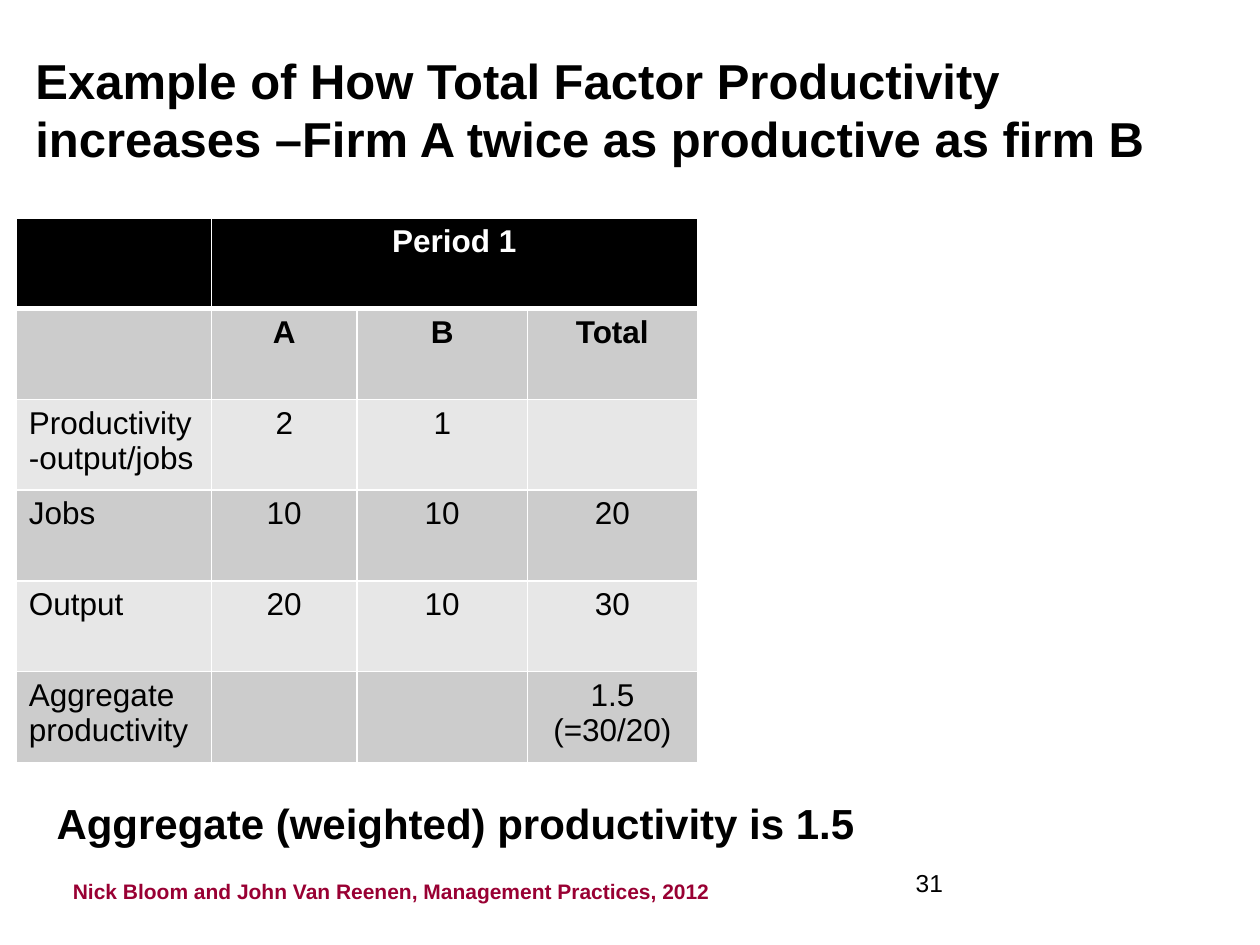
from lxml.etree import SubElement
from pptx import Presentation
from pptx.dml.color import RGBColor
from pptx.enum.text import MSO_ANCHOR, MSO_AUTO_SIZE, PP_ALIGN
from pptx.oxml.ns import qn
from pptx.util import Cm, Pt

COLOURS = {
    "text": "000000",
    "header": "000000",
    "header_text": "FFFFFF",
    "border": "FFFFFF",
    "dark_band": "CCCCCC",
    "light_band": "E7E7E7",
    "source": "990033",
}
FONT = "Arial"
TITLE = ("Example of How Total Factor Productivity increases "
         "–Firm A twice as productive as firm B")
ROWS = [
    ["", "Period 1", "", ""],
    ["", "A", "B", "Total"],
    ["Productivity\n-output/jobs", "2", "1", ""],
    ["Jobs", "10", "10", "20"],
    ["Output", "20", "10", "30"],
    ["Aggregate productivity", "", "", "1.5 (=30/20)"],
]
COLUMN_WIDTHS = [3.93, 2.94, 3.43, 3.43]
ROW_HEIGHT = 1.83
TABLE_LEFT, TABLE_TOP = 0.33, 4.39
NOTES = [
    ("Nick Bloom and John Van Reenen, Management Practices, 2012",
     (1.22, 17.58, 13.46, 0.76), 12, "source", True, False),
    ("31", (18.21, 17.37, 5.28, 1.27), 14, "text", False, True),
    ("Aggregate (weighted) productivity is 1.5",
     (0.89, 15.95, 16.74, 1.27), 24, "text", True, False),
]


def add_run(paragraph, text, size, colour, bold):
    run = paragraph.add_run()
    run.text = text
    run.font.name = FONT
    run.font.size = Pt(size)
    run.font.bold = bold
    run.font.color.rgb = RGBColor.from_string(COLOURS[colour])


def add_borders(cell, row):
    properties = cell._tc.get_or_add_tcPr()
    widths = {
        "a:lnL": 1,
        "a:lnR": 1,
        "a:lnT": 3 if row == 1 else 1,
        "a:lnB": 3 if row == 0 else 1,
    }
    for side, width in widths.items():
        line = SubElement(properties, qn(side), w=str(Pt(width)))
        fill = SubElement(line, qn("a:solidFill"))
        SubElement(fill, qn("a:srgbClr"), val=COLOURS["border"])


def add_productivity_table(slide):
    table = slide.shapes.add_table(
        len(ROWS), len(COLUMN_WIDTHS), Cm(TABLE_LEFT), Cm(TABLE_TOP),
        Cm(sum(COLUMN_WIDTHS)), Cm(ROW_HEIGHT * len(ROWS))).table
    for column, width in zip(table.columns, COLUMN_WIDTHS):
        column.width = Cm(width)
    for row, labels in enumerate(ROWS):
        table.rows[row].height = Cm(ROW_HEIGHT)
        band = "header" if row == 0 else "dark_band" if row % 2 else "light_band"
        for column, label in enumerate(labels):
            cell = table.cell(row, column)
            add_borders(cell, row)
            cell.fill.solid()
            cell.fill.fore_color.rgb = RGBColor.from_string(COLOURS[band])
            if not label:
                continue
            for index, line in enumerate(label.split("\n")):
                frame = cell.text_frame
                paragraph = frame.add_paragraph() if index else frame.paragraphs[0]
                paragraph.alignment = PP_ALIGN.CENTER if column else PP_ALIGN.LEFT
                add_run(paragraph, line, 18,
                        "text" if row else "header_text", row < 2)
    table.cell(0, 1).merge(table.cell(0, 3))


def add_title(slide):
    title = slide.shapes.title
    title.left, title.top, title.width, title.height = map(
        Cm, (0.46, 0.76, 23.67, 3.18))
    frame = title.text_frame
    frame.word_wrap = True
    frame.auto_size = MSO_AUTO_SIZE.NONE
    frame.vertical_anchor = MSO_ANCHOR.TOP
    frame.margin_top = Cm(0.25)
    frame.paragraphs[0].alignment = PP_ALIGN.LEFT
    add_run(frame.paragraphs[0], TITLE, 28, "text", True)


def main():
    presentation = Presentation()
    presentation.slide_width, presentation.slide_height = Cm(25.4), Cm(19.05)
    slide = presentation.slides.add_slide(presentation.slide_layouts[5])
    add_title(slide)
    add_productivity_table(slide)
    for text, box, size, colour, bold, wrap in NOTES:
        frame = slide.shapes.add_textbox(*map(Cm, box)).text_frame
        frame.word_wrap = wrap
        add_run(frame.paragraphs[0], text, size, colour, bold)
    presentation.save("out.pptx")


if __name__ == "__main__":
    main()
